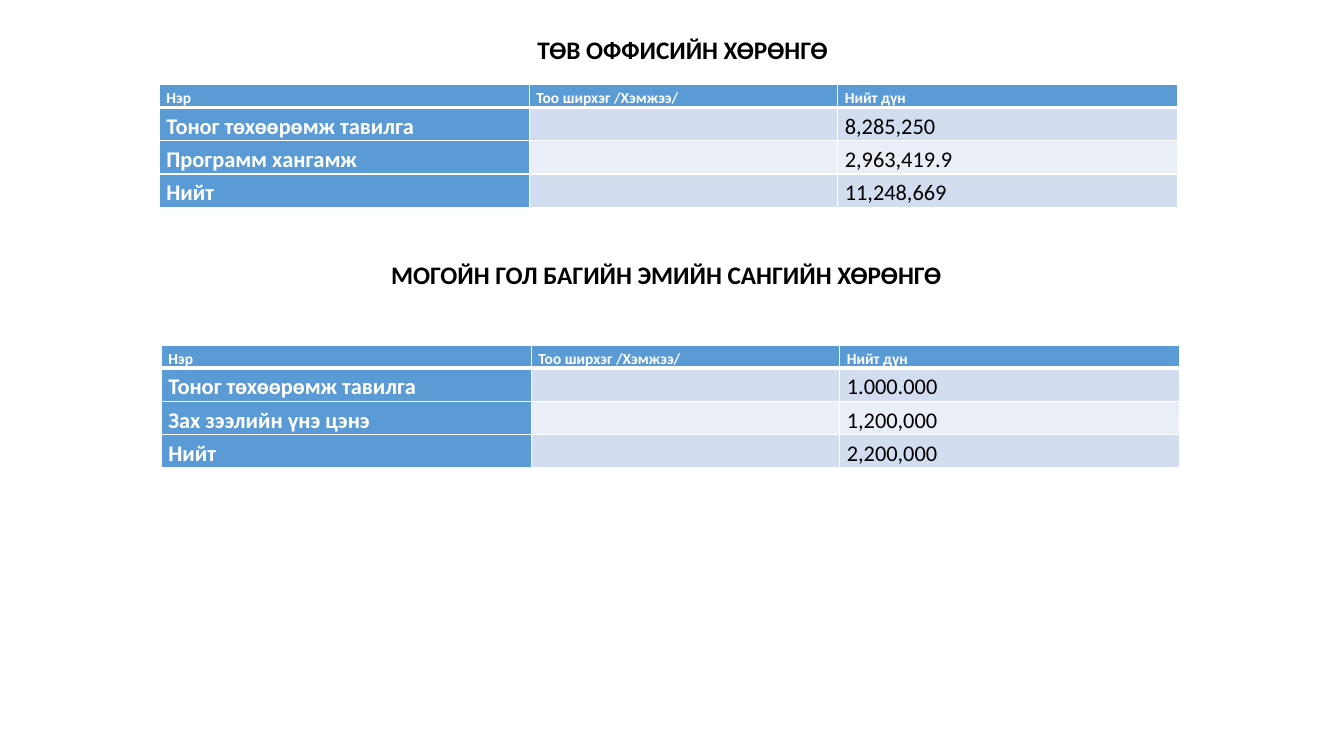
from lxml.etree import SubElement
from pptx import Presentation
from pptx.dml.color import RGBColor
from pptx.enum.text import PP_ALIGN
from pptx.oxml.ns import qn
from pptx.util import Inches, Pt

COLORS = {
    "header": "5B9BD5",
    "odd_band": "D2DEEF",
    "even_band": "EAEFF7",
    "light": "FFFFFF",
    "dark": "000000",
}
FONT = "Calibri"
COLUMN_WIDTHS = [3.67, 3.06, 3.37]
HEADER_HEIGHT, ROW_HEIGHT = 0.22, 0.33
HEADINGS = ["Нэр", "Тоо ширхэг /Хэмжээ/", "Нийт дүн"]
OFFICE_ASSETS = [
    ["Тоног төхөөрөмж тавилга", "", "8,285,250"],
    ["Программ хангамж", "", "2,963,419.9"],
    ["Нийт", "", "11,248,669"],
]
PHARMACY_ASSETS = [
    ["Тоног төхөөрөмж тавилга", "", "1.000.000"],
    ["Зах зээлийн үнэ цэнэ", "", "1,200,000"],
    ["Нийт", "", "2,200,000"],
]


def color(name):
    return RGBColor.from_string(COLORS[name])


def add_run(paragraph, text, size, color_name, bold):
    run = paragraph.add_run()
    run.text = text
    run.font.name = FONT
    run.font.size = Pt(size)
    run.font.bold = bold
    run.font.color.rgb = color(color_name)


def add_title(slide, text, left, top):
    box = slide.shapes.add_textbox(Inches(left), Inches(top), Inches(10), Inches(0.56))
    box.text_frame.word_wrap = True
    paragraph = box.text_frame.paragraphs[0]
    paragraph.alignment = PP_ALIGN.CENTER
    paragraph.line_spacing = 0.9
    add_run(paragraph, text, 18, "dark", True)


def set_borders(cell, row):
    """Draw thin white borders, with a thick rule under the header row."""
    widths = {"L": 1, "R": 1, "T": 3 if row == 1 else 1, "B": 3 if row == 0 else 1}
    properties = cell._tc.get_or_add_tcPr()
    for side, width in widths.items():
        line = SubElement(properties, qn(f"a:ln{side}"), w=str(Pt(width)))
        fill = SubElement(line, qn("a:solidFill"))
        SubElement(fill, qn("a:srgbClr"), val=COLORS["light"])


def format_cell(cell, text, row, column):
    is_heading = row == 0 or column == 0
    band = "odd_band" if row % 2 else "even_band"
    set_borders(cell, row)
    cell.fill.solid()
    cell.fill.fore_color.rgb = color("header" if is_heading else band)
    cell.margin_left = cell.margin_right = Inches(0.07)
    cell.margin_top = cell.margin_bottom = 0
    if text:
        paragraph = cell.text_frame.paragraphs[0]
        paragraph.line_spacing = 1.2
        paragraph.space_before = Pt(3)
        add_run(paragraph, text, 16 if row else 11,
                "light" if is_heading else "dark", is_heading)


def add_asset_table(slide, assets, left, top):
    rows = [HEADINGS] + assets
    height = HEADER_HEIGHT + ROW_HEIGHT * len(assets)
    frame = slide.shapes.add_table(
        len(rows), len(HEADINGS), Inches(left), Inches(top),
        Inches(sum(COLUMN_WIDTHS)), Inches(height))
    table = frame.table
    for column, width in zip(table.columns, COLUMN_WIDTHS):
        column.width = Inches(width)
    for row, texts in enumerate(rows):
        table.rows[row].height = Inches(ROW_HEIGHT if row else HEADER_HEIGHT)
        for column, text in enumerate(texts):
            format_cell(table.cell(row, column), text, row, column)


def main():
    presentation = Presentation()
    presentation.slide_width = Inches(13.33)
    presentation.slide_height = Inches(7.5)
    slide = presentation.slides.add_slide(presentation.slide_layouts[6])
    add_asset_table(slide, OFFICE_ASSETS, 1.58, 0.84)
    add_title(slide, "ТӨВ ОФФИСИЙН ХӨРӨНГӨ", 1.77, 0.33)
    add_asset_table(slide, PHARMACY_ASSETS, 1.6, 3.43)
    add_title(slide, "МОГОЙН ГОЛ БАГИЙН ЭМИЙН САНГИЙН ХӨРӨНГӨ", 1.61, 2.56)
    presentation.save("out.pptx")


if __name__ == "__main__":
    main()
